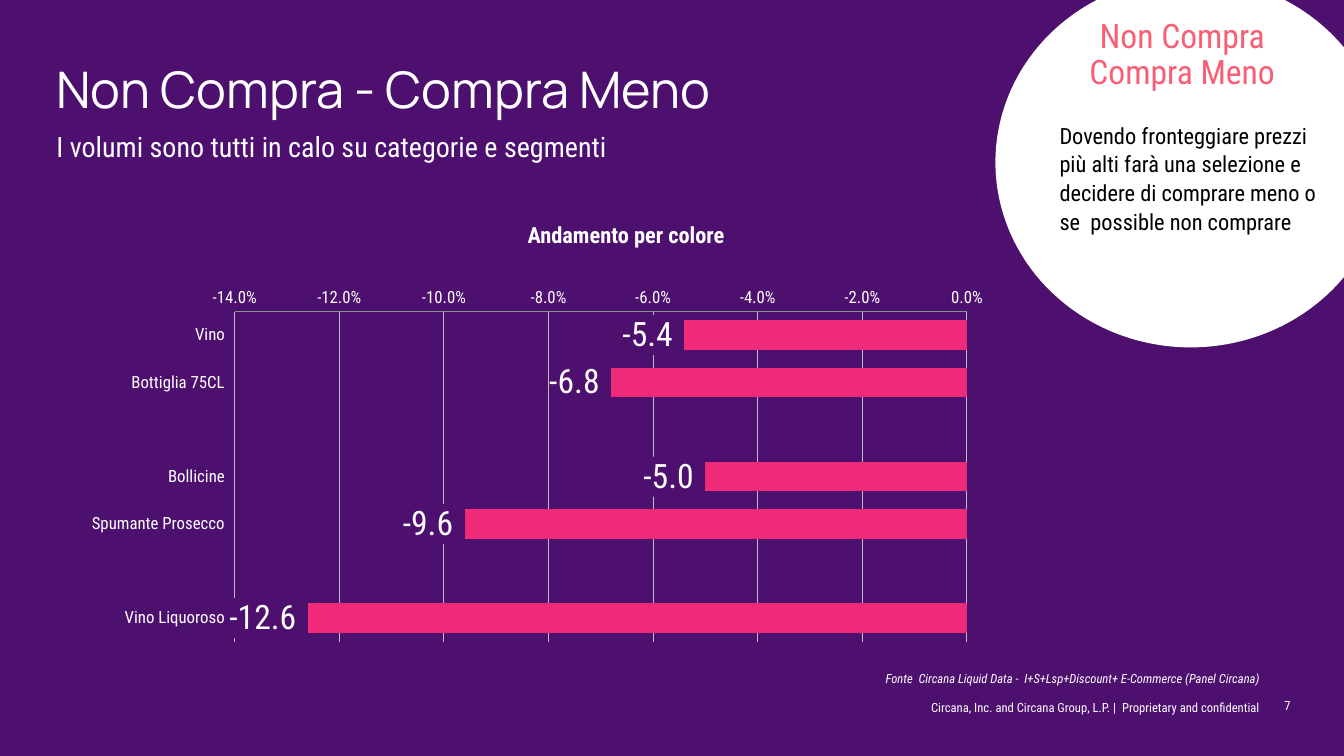
from dataclasses import dataclass

from lxml import etree
from pptx import Presentation
from pptx.chart.data import CategoryChartData
from pptx.dml.color import RGBColor as RGB
from pptx.enum.chart import (XL_CHART_TYPE as CT, XL_LABEL_POSITION as LP,
                             XL_TICK_LABEL_POSITION as TLP, XL_TICK_MARK as TM)
from pptx.enum.shapes import MSO_SHAPE
from pptx.enum.text import MSO_ANCHOR as ANCHOR, MSO_AUTO_SIZE, PP_ALIGN as ALIGN
from pptx.oxml import parse_xml
from pptx.oxml.ns import nsdecls, qn
from pptx.util import Inches, Pt


@dataclass(frozen=True)
class Theme:
    purple: RGB = RGB.from_string("4E106F")
    white: RGB = RGB.from_string("FFFFFF")
    black: RGB = RGB.from_string("000000")
    pink: RGB = RGB.from_string("EF2A79")
    coral: RGB = RGB.from_string("F75F75")
    grid: RGB = RGB.from_string("BFBFBF")
    axis: RGB = RGB.from_string("8E908F")
    head: str = "Manrope"
    body: str = "Roboto Condensed"
    title: int = 36
    value: int = 24
    subtitle: int = 20
    text: int = 16
    tick: int = 12
    small: int = 9


T = Theme()


def style_font(font, size, color=T.white, name=T.body, bold=False, italic=False):
    font.size, font.name = Pt(size), name
    font.bold, font.italic = bold, italic
    font.color.rgb = color


def place(sp, x, y, w, h):
    sp.left, sp.top, sp.width, sp.height = map(Inches, (x, y, w, h))


def write(sp, text, size, align=ALIGN.LEFT, anchor=ANCHOR.TOP, spacing=1.0,
          after=0, inset=(0, 0), **font):
    tf = sp.text_frame
    tf.word_wrap = True
    tf.auto_size = MSO_AUTO_SIZE.NONE
    tf.vertical_anchor = anchor
    tf.margin_left = tf.margin_right = Inches(inset[0])
    tf.margin_top = tf.margin_bottom = Inches(inset[1])
    p = tf.paragraphs[0]
    p.alignment, p.line_spacing = align, spacing
    p.space_before, p.space_after = Pt(0), Pt(after)
    pPr = p._p.get_or_add_pPr()
    pPr.set("marL", "0")
    pPr.set("indent", "0")
    etree.SubElement(pPr, qn("a:buNone"))
    r = p.add_run()
    r.text = text
    style_font(r.font, size, **font)


def add_text(s, box, text, size, **kw):
    write(s.shapes.add_textbox(*map(Inches, box)), text, size, **kw)


def heading(s, x, y):
    title, subtitle = s.shapes.title, s.placeholders[1]
    place(title, x, y, 7.62, 0.6)
    write(title, "Non Compra - Compra Meno", T.title, spacing=0.9, name=T.head)
    place(subtitle, x, y + 0.68, 12.23, 0.5)
    write(subtitle, "I volumi sono tutti in calo su categorie e segmenti",
          T.subtitle, spacing=0.9)


def callout(s, x, y, w, h):
    sp = s.shapes.add_shape(MSO_SHAPE.OVAL, *map(Inches, (x, y, w, h)))
    sp.shadow.inherit = False
    sp.fill.solid()
    sp.fill.fore_color.rgb = sp.line.color.rgb = T.white
    sp.line.width = Pt(1)
    add_text(s, (x + 0.53, y + 1.36, 2.82, 1.24),
             "Dovendo fronteggiare prezzi più alti farà una selezione e "
             "decidere di comprare meno o se  possible non comprare",
             T.text, spacing=1.07, inset=(0.1, 0.05), color=T.black)
    add_text(s, (x + 0.6, y + 0.36, 2.49, 0.64), "Non Compra Compra Meno",
             T.value, align=ALIGN.CENTER, spacing=0.9, inset=(0.1, 0.05),
             color=T.coral)


def style_axis(axis, line_color):
    axis.major_tick_mark = axis.minor_tick_mark = TM.NONE
    axis.format.line.color.rgb = line_color
    axis.format.line.width = Pt(0.75)
    style_font(axis.tick_labels.font, T.tick)


def fix_plot_area(chart, x, y, w, h):
    area = chart._chartSpace.chart.plotArea
    for old in area.findall(qn("c:layout")):
        area.remove(old)
    parts = "".join(f'<c:{k} val="{v}"/>' for k, v in (
        ("layoutTarget", "inner"), ("xMode", "edge"), ("yMode", "edge"),
        ("x", x), ("y", y), ("w", w), ("h", h)))
    area.insert(0, parse_xml(f'<c:layout {nsdecls("c")}><c:manualLayout>'
                             f'{parts}</c:manualLayout></c:layout>'))


def trend_chart(s, x, y, w, h):
    add_text(s, (x + 1.1, y - 0.61, 9.1, 0.27), "Andamento per colore", T.text,
             align=ALIGN.CENTER, bold=True)
    data = CategoryChartData(number_format="#,##0.0")
    data.categories = ["Vino", "Bottiglia 75CL", "", "Bollicine",
                       "Spumante Prosecco", "", "Vino Liquoroso"]
    data.add_series("Series 1", [-5.4, -6.8, None, -5.0, -9.6, None, -12.6])
    chart = s.shapes.add_chart(CT.BAR_CLUSTERED,
                               *map(Inches, (x, y, w, h)), data).chart
    chart.has_title = chart.has_legend = False
    style_font(chart.font, 10)
    fix_plot_area(chart, 0.19, 0.08, 0.78, 0.9)

    # Axes
    cat, val = chart.category_axis, chart.value_axis
    style_axis(cat, T.grid)
    cat.reverse_order = True
    cat.tick_label_position = TLP.LOW
    style_axis(val, T.axis)
    val.minimum_scale, val.maximum_scale, val.major_unit = -14, 0, 2
    val.tick_labels.number_format = '#,##0.0"%"'
    val.tick_labels.number_format_is_linked = False
    val.major_gridlines.format.line.color.rgb = T.grid
    val.major_gridlines.format.line.width = Pt(0.75)

    # Bars
    plot = chart.plots[0]
    plot.gap_width, plot.vary_by_categories = 60, False
    bars = plot.series[0]
    bars.invert_if_negative = False
    bars.format.fill.solid()
    bars.format.fill.fore_color.rgb = T.pink

    # Value labels, filled so the gridlines do not cross them
    labels = bars.data_labels
    labels.show_value, labels.position = True, LP.OUTSIDE_END
    labels.number_format = r"#,##0.0_ ;\-#,##0.0\ "
    labels.number_format_is_linked = False
    style_font(labels.font, T.value)
    labels._element.find(qn("c:numFmt")).addnext(parse_xml(
        f'<c:spPr {nsdecls("c", "a")}><a:solidFill><a:srgbClr val="{T.purple}"/>'
        '</a:solidFill></c:spPr>'))


def footer(s, right, y):
    source = s.placeholders[2]
    place(source, right - 5.35, y, 5.35, 0.18)
    write(source, "Fonte  Circana Liquid Data -  I+S+Lsp+Discount+ E-Commerce "
          "(Panel Circana)", T.small, align=ALIGN.RIGHT, anchor=ANCHOR.BOTTOM,
          spacing=0.9, italic=True)
    add_text(s, (right - 4.2, y + 0.27, 4.2, 0.2),
             "Circana, Inc. and Circana Group, L.P. |\u00a0 Proprietary and confidential",
             T.small, align=ALIGN.RIGHT, anchor=ANCHOR.BOTTOM, spacing=0.9)
    add_text(s, (right + 0.15, y + 0.26, 0.16, 0.18), "7", T.small,
             align=ALIGN.RIGHT, anchor=ANCHOR.BOTTOM)


def main():
    prs = Presentation()
    prs.slide_width, prs.slide_height = Inches(13.33), Inches(7.5)
    s = prs.slides.add_slide(prs.slide_layouts[3])
    s.background.fill.solid()
    s.background.fill.fore_color.rgb = T.purple
    heading(s, 0.56, 0.64)
    callout(s, 9.88, -0.22, 3.86, 3.66)
    trend_chart(s, 0.56, 2.8, 9.31, 3.64)
    footer(s, 12.49, 6.63)
    prs.save("out.pptx")


if __name__ == "__main__":
    main()
